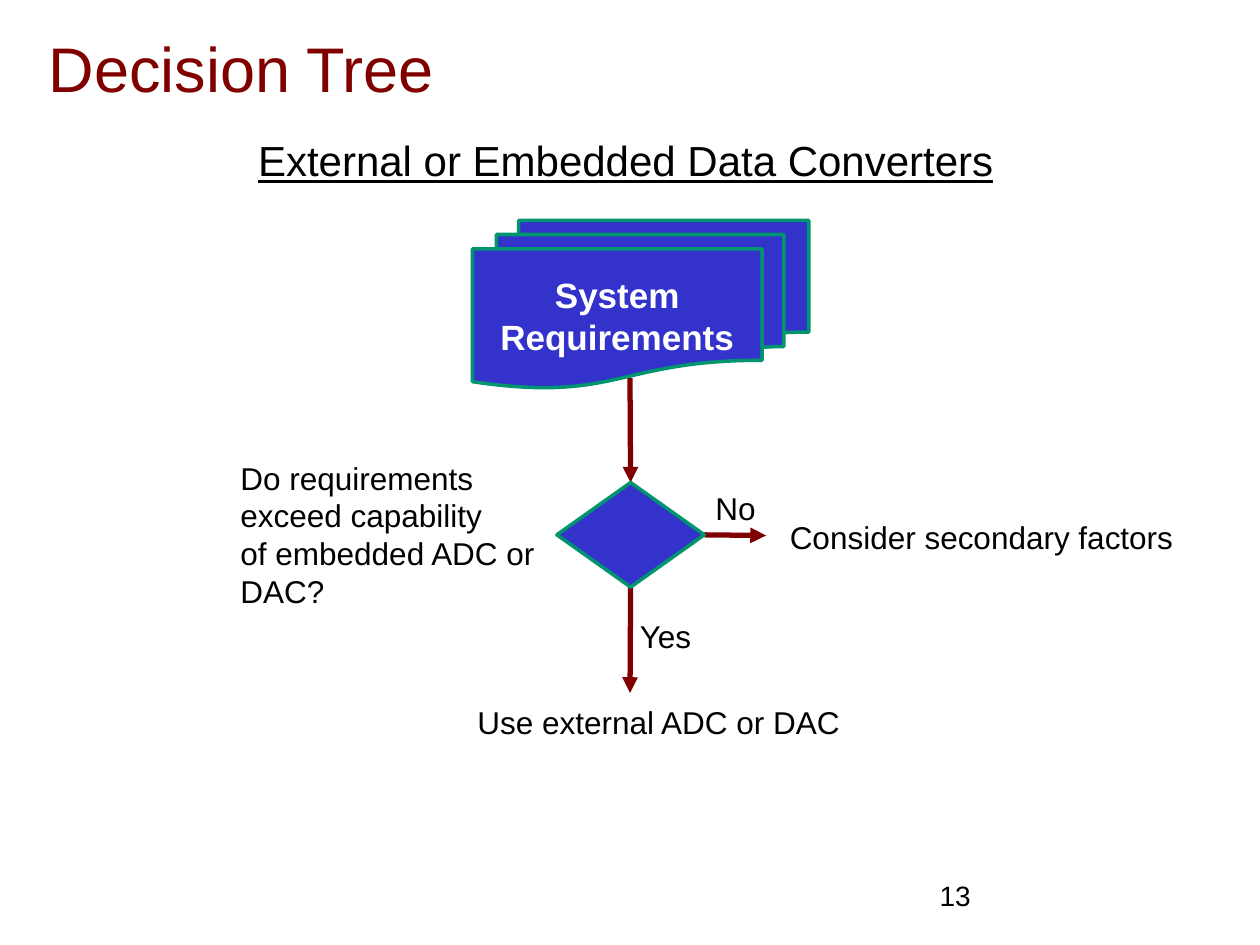
import pptx
import pptx.util
import pptx.dml.color
import pptx.enum.shapes
import pptx.enum.text
import pptx.oxml
import pptx.oxml.ns

Inches = pptx.util.Inches
Pt = pptx.util.Pt
RGBColor = pptx.dml.color.RGBColor
MSO_SHAPE = pptx.enum.shapes.MSO_SHAPE
MSO_ANCHOR = pptx.enum.text.MSO_ANCHOR
PP_ALIGN = pptx.enum.text.PP_ALIGN

MAROON = RGBColor(0x80, 0x00, 0x00)
BLUE = RGBColor(0x33, 0x33, 0xCC)
GREEN = RGBColor(0x00, 0x95, 0x6F)
BLACK = RGBColor(0x00, 0x00, 0x00)
WHITE = RGBColor(0xFF, 0xFF, 0xFF)


def write_text(shape, text, size, color, **formats):
    paragraph = shape.text_frame.paragraphs[0]
    paragraph.text = text
    values = {"name": "Arial", "size": Pt(size), **formats}
    for run in paragraph.runs:
        run.font.color.rgb = color
        for name, value in values.items():
            setattr(run.font, name, value)
    return paragraph


presentation = pptx.Presentation()
presentation.slide_width = Inches(10)
presentation.slide_height = Inches(7.5)
slide = presentation.slides.add_slide(presentation.slide_layouts[6])

nodes = {}
for name, kind, left, top, width, height in [
    ("decision", MSO_SHAPE.FLOWCHART_DECISION, 4.42, 3.83, 1.17, 0.83),
    ("requirements", MSO_SHAPE.FLOWCHART_MULTIDOCUMENT, 3.75, 1.75, 2.67, 1.33),
]:
    shape = slide.shapes.add_shape(
        kind, Inches(left), Inches(top), Inches(width), Inches(height))
    shape.shadow.inherit = False
    shape.fill.solid()
    shape.fill.fore_color.rgb = BLUE
    shape.line.color.rgb = GREEN
    shape.line.width = Pt(2)
    nodes[name] = shape

requirements = nodes["requirements"]
requirements.text_frame.vertical_anchor = MSO_ANCHOR.MIDDLE
paragraph = write_text(requirements, "System\vRequirements", 20, WHITE, bold=True)
paragraph.alignment = PP_ALIGN.CENTER

arrows = []
for start_x, start_y, end_x, end_y in [
    (5, 3, 5, 3.83),
    (5, 4.67, 5, 5.5),
    (5.59, 4.25, 6.08, 4.25),
]:
    arrow = slide.shapes.add_connector(
        pptx.enum.shapes.MSO_CONNECTOR.STRAIGHT,
        Inches(start_x), Inches(start_y), Inches(end_x), Inches(end_y))
    arrow.line.color.rgb = MAROON
    arrow.line.width = Pt(3)
    line = arrow.line._get_or_add_ln()
    tail = pptx.oxml.parse_xml(
        '<a:tailEnd %s type="triangle"/>' % pptx.oxml.ns.nsdecls("a"))
    line.append(tail)
    effects = pptx.oxml.parse_xml(
        "<a:effectLst %s/>" % pptx.oxml.ns.nsdecls("a"))
    arrow._element.spPr.append(effects)
    slide.shapes._spTree.remove(arrow._element)
    slide.shapes._spTree.insert(2 + len(arrows), arrow._element)
    arrows.append(arrow)

to_decision, yes_arrow, no_arrow = arrows
to_decision.end_connect(nodes["decision"], 0)
yes_arrow.begin_connect(nodes["decision"], 2)
no_arrow.begin_connect(nodes["decision"], 3)

for text, left, top, width, height, size, color, wrap, formats in [
    ("Decision Tree", 0.29, 0.08, 9.5, 0.91, 36, MAROON, True, {}),
    ("External or Embedded Data Converters", 1.95, 1.02, 6.04, 0.5, 24, BLACK,
     False, {"underline": True}),
    ("Do requirements exceed capability\vof embedded ADC or DAC?",
     1.81, 3.59, 2.61, 1.3, 18, BLACK, True, {}),
    ("No", 5.58, 3.83, 0.52, 0.4, 18, BLACK, False, {}),
    ("Yes", 4.98, 4.85, 0.61, 0.4, 18, BLACK, False, {}),
    ("Use external ADC or DAC", 3.69, 5.53, 3.09, 0.4, 18, BLACK, False, {}),
    ("Consider secondary factors", 6.17, 4.06, 3.24, 0.4, 18, BLACK, False, {}),
    ("13", 7.36, 6.92, 0.73, 0.37, 16, BLACK, True, {}),
]:
    box = slide.shapes.add_textbox(
        Inches(left), Inches(top), Inches(width), Inches(height))
    box.text_frame.word_wrap = wrap
    box.text_frame.vertical_anchor = MSO_ANCHOR.MIDDLE
    write_text(box, text, size, color, **formats)

presentation.save("out.pptx")
